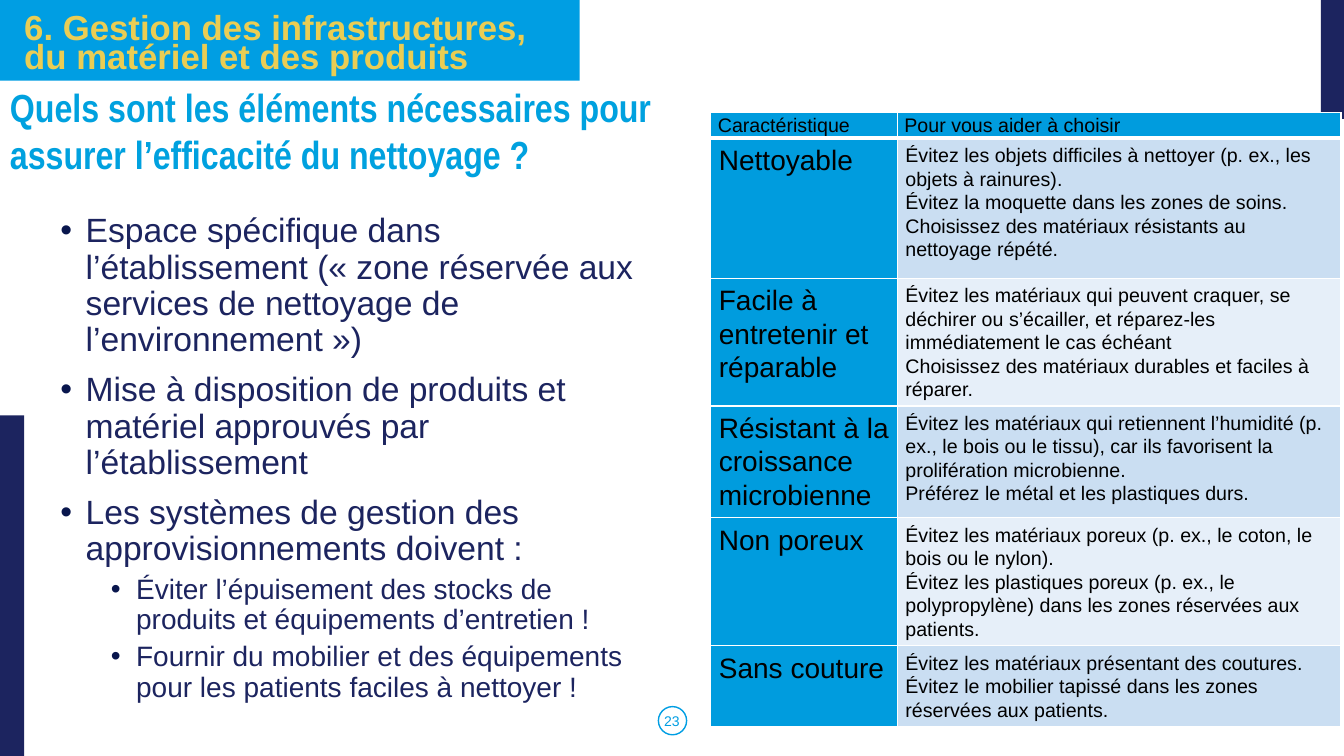
from lxml import etree
from pptx import Presentation
from pptx import util as u
from pptx.dml.color import RGBColor
from pptx.enum import shapes, text
from pptx.oxml import ns

BLUE, NAVY, GOLD, CYAN = "009EE3", "1C245F", "EACD54", "00A1DF"
HEADER, BANDS = "009CDE", ("CADEF2", "E6EFF9")

REQUIREMENTS = [
    (0, "Espace spécifique dans l’établissement (« zone réservée aux services de nettoyage de l’environnement »)"),
    (0, "Mise à disposition de produits et matériel approuvés par l’établissement"),
    (0, "Les systèmes de gestion des approvisionnements doivent :"),
    (1, "Éviter l’épuisement des stocks de produits et équipements d’entretien !"),
    (1, "Fournir du mobilier et des équipements pour les patients faciles à nettoyer !"),
]

CRITERIA = [
    ("Caractéristique", ["Pour vous aider à choisir"]),
    ("Nettoyable", [
        "Évitez les objets difficiles à nettoyer (p. ex., les objets à rainures).",
        "Évitez la moquette dans les zones de soins.",
        "Choisissez des matériaux résistants au nettoyage répété."]),
    ("Facile à entretenir et réparable", [
        "Évitez les matériaux qui peuvent craquer, se déchirer ou s’écailler, et réparez-les immédiatement le cas échéant",
        "Choisissez des matériaux durables et faciles à réparer."]),
    ("Résistant à la croissance microbienne", [
        "Évitez les matériaux qui retiennent l’humidité (p. ex., le bois ou le tissu), car ils favorisent la prolifération microbienne.",
        "Préférez le métal et les plastiques durs."]),
    ("Non poreux", [
        "Évitez les matériaux poreux (p. ex., le coton, le bois ou le nylon).",
        "Évitez les plastiques poreux (p. ex., le polypropylène) dans les zones réservées aux patients."]),
    ("Sans couture", [
        "Évitez les matériaux présentant des coutures.",
        "Évitez le mobilier tapissé dans les zones réservées aux patients."]),
]


def rgb(value):
    return RGBColor.from_string(value)


def inches(values):
    return [u.Inches(value) for value in values]


def write(paragraph, words, size=14, color="000000", font="Arial", bold=False,
          align=text.PP_ALIGN.LEFT, spacing=1.0, before=0):
    paragraph.alignment = align
    paragraph.line_spacing = spacing
    paragraph.space_before = u.Pt(before)
    run = paragraph.add_run()
    run.text = words
    run.font.name, run.font.size, run.font.bold = font, u.Pt(size), bold
    run.font.color.rgb = rgb(color)


def add_bullet(paragraph, margin, color):
    properties = paragraph._p.get_or_add_pPr()
    properties.set("marL", str(u.Inches(margin)))
    properties.set("indent", str(u.Inches(-0.25)))
    bullet_color = etree.SubElement(properties, ns.qn("a:buClr"))
    etree.SubElement(bullet_color, ns.qn("a:srgbClr"), val=color)
    etree.SubElement(properties, ns.qn("a:buFont"), typeface="Arial")
    etree.SubElement(properties, ns.qn("a:buChar"), char="•")


def add_border(cell, side, points):
    border = etree.SubElement(cell._tc.get_or_add_tcPr(), ns.qn(f"a:ln{side}"), w=str(u.Pt(points)))
    fill = etree.SubElement(border, ns.qn("a:solidFill"))
    etree.SubElement(fill, ns.qn("a:srgbClr"), val="FFFFFF")


class SlideBuilder:
    def __init__(self, slide):
        self.slide = slide

    def shape(self, kind, box, fill=None, line=None):
        shape = self.slide.shapes.add_shape(kind, *inches(box))
        shape.shadow.inherit = False
        if fill:
            shape.fill.solid()
            shape.fill.fore_color.rgb = rgb(fill)
        else:
            shape.fill.background()
        if line:
            shape.line.color.rgb = rgb(line)
            shape.line.width = u.Pt(1)
        else:
            shape.line.fill.background()

    def frame(self, holder, anchor):
        frame = holder.text_frame
        frame.word_wrap = True
        frame.auto_size = text.MSO_AUTO_SIZE.NONE
        frame.vertical_anchor = anchor
        return frame

    def placeholder(self, index, box):
        holder = self.slide.placeholders[index]
        holder.left, holder.top, holder.width, holder.height = inches(box)
        self.slide.shapes._spTree.append(holder._element)
        return self.frame(holder, text.MSO_ANCHOR.TOP)

    def textbox(self, box, words, anchor=text.MSO_ANCHOR.TOP, **style):
        frame = self.frame(self.slide.shapes.add_textbox(*inches(box)), anchor)
        write(frame.paragraphs[0], words, **style)

    def title(self, box, words, **style):
        write(self.placeholder(0, box).paragraphs[0], words, **style)

    def bullets(self, box, items):
        frame = self.placeholder(1, box)
        for number, (level, words) in enumerate(items):
            paragraph = frame.add_paragraph() if number else frame.paragraphs[0]
            paragraph.level = level
            before = (10, 5)[level] if number else 0
            write(paragraph, words, size=(24, 20)[level], color=NAVY, spacing=0.9, before=before)
            add_bullet(paragraph, (0.25, 0.75)[level], "09164D")

    def cell(self, cell, lines, fill, size, header, below_header):
        side, edge = (0.07, 0) if header else (0.08, 0.05)
        cell.margin_left = cell.margin_right = u.Inches(side)
        cell.margin_top = cell.margin_bottom = u.Inches(edge)
        for number, words in enumerate(lines):
            paragraph = cell.text_frame.add_paragraph() if number else cell.text_frame.paragraphs[0]
            write(paragraph, words, size=size, spacing=1.07)
        for border, points in (("L", 1), ("R", 1), ("T", 3 if below_header else 1), ("B", 3 if header else 1)):
            add_border(cell, border, points)
        cell.fill.solid()
        cell.fill.fore_color.rgb = rgb(fill)

    def table(self, left, top, widths, heights, content):
        box = inches((left, top, sum(widths), sum(heights)))
        table = self.slide.shapes.add_table(len(heights), len(widths), *box).table
        for column, width in zip(table.columns, widths):
            column.width = u.Inches(width)
        for index, (feature, advice) in enumerate(content):
            table.rows[index].height = u.Inches(heights[index])
            header = index == 0
            advice_fill = HEADER if header else BANDS[(index - 1) % 2]
            self.cell(table.cell(index, 0), [feature], HEADER, 14 if header else 20, header, index == 1)
            self.cell(table.cell(index, 1), advice, advice_fill, 14, header, index == 1)


def main():
    deck = Presentation()
    deck.slide_width, deck.slide_height = inches((13.33, 7.5))
    page = SlideBuilder(deck.slides.add_slide(deck.slide_layouts[1]))
    rectangle, oval = shapes.MSO_SHAPE.RECTANGLE, shapes.MSO_SHAPE.OVAL

    page.shape(rectangle, (0, 0, 5.75, 0.8), fill=BLUE)
    page.shape(rectangle, (0, 4.12, 0.24, 3.38), fill=NAVY)
    page.shape(rectangle, (13.1, 0, 0.23, 1.18), fill=NAVY)
    page.shape(oval, (6.53, 7.01, 0.28, 0.28), line=BLUE)

    page.title((0.14, 0.12, 5.28, 0.69), "6. Gestion des infrastructures, du matériel et des produits",
               size=24.8, color=GOLD, bold=True, spacing=0.7)
    page.textbox((0, 0.78, 7.05, 0.57), "Quels sont les éléments nécessaires pour assurer l’efficacité du nettoyage ?",
                 size=28, color=CYAN, font="Arial Narrow", bold=True)
    page.bullets((0.5, 2.07, 6.04, 5.09), REQUIREMENTS)
    page.textbox((0, 6.95, 13.33, 0.4), "23", anchor=text.MSO_ANCHOR.MIDDLE,
                 size=10, color=BLUE, align=text.PP_ALIGN.CENTER)
    page.table(7.05, 1.12, (1.85, 4.4), (0.25, 1.39, 1.13, 1.11, 1.13, 0.62), CRITERIA)
    deck.save("out.pptx")


if __name__ == "__main__":
    main()
